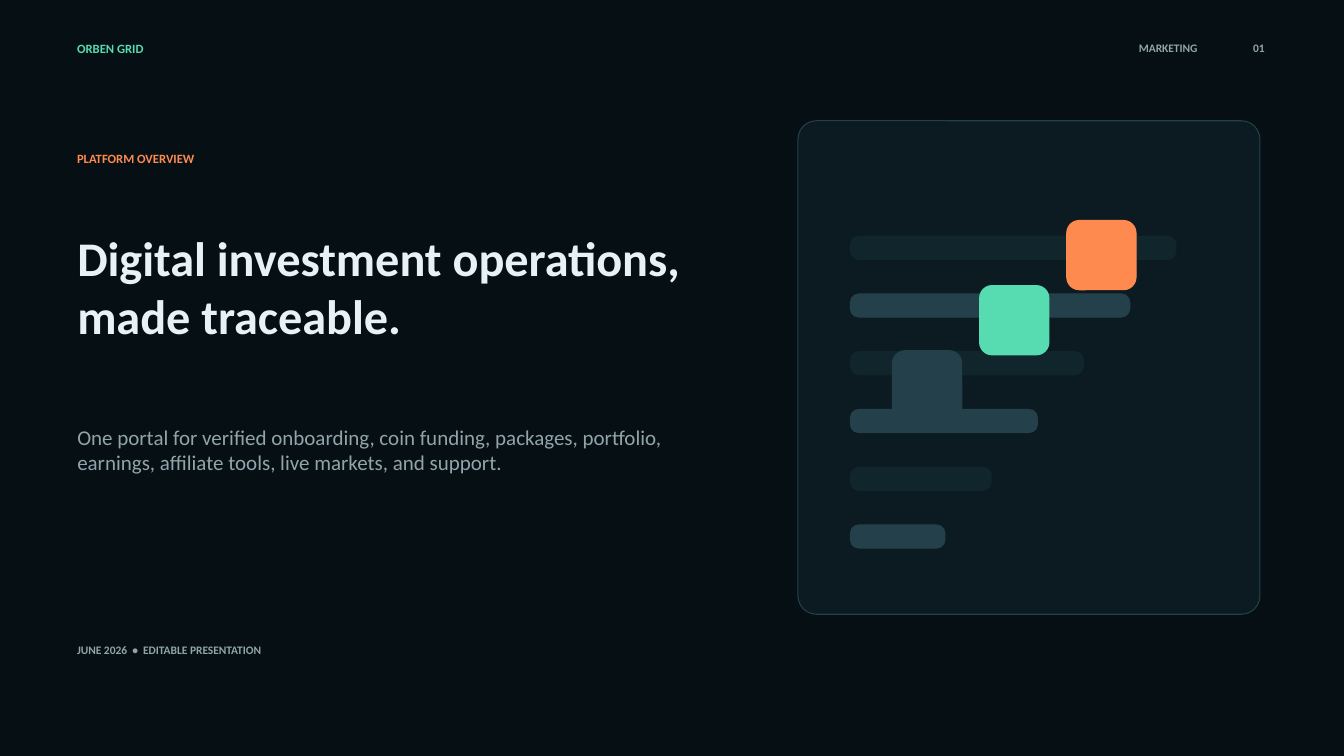
"""Build the cover slide of a platform overview deck."""
from pptx import Presentation
from pptx.dml.color import RGBColor
from pptx.enum.shapes import MSO_SHAPE
from pptx.enum.text import MSO_ANCHOR, MSO_AUTO_SIZE, PP_ALIGN
from pptx.util import Pt

PX = 9525
ROUND = MSO_SHAPE.ROUNDED_RECTANGLE
MIDDLE = MSO_ANCHOR.MIDDLE
FIXED = MSO_AUTO_SIZE.NONE
LEFT, RIGHT = PP_ALIGN.LEFT, PP_ALIGN.RIGHT

NIGHT = RGBColor(0x06, 0x10, 0x14)
PANEL = RGBColor(0x0C, 0x1B, 0x21)
DIM = RGBColor(0x10, 0x25, 0x2C)
SLATE = RGBColor(0x24, 0x40, 0x4A)
MINT = RGBColor(0x56, 0xDC, 0xB0)
ORANGE = RGBColor(0xFF, 0x8A, 0x50)
WHITE = RGBColor(0xE8, 0xF1, 0xF3)
GREY = RGBColor(0x91, 0xA4, 0xAC)

deck = Presentation()
deck.slide_width, deck.slide_height = 1280 * PX, 720 * PX
slide = deck.slides.add_slide(deck.slide_layouts[0])
slide.background.fill.solid()
slide.background.fill.fore_color.rgb = NIGHT


def write(words, box, size, color, bold=True, align=LEFT, holder=None):
    """Put text in a placeholder or a new text box and return its paragraph."""
    left, top, width, height = [n * PX for n in box]
    shape = holder or slide.shapes.add_textbox(left, top, width, height)
    shape.left, shape.top, shape.width, shape.height = left, top, width, height
    frame = shape.text_frame
    frame.word_wrap = True
    frame.auto_size = FIXED
    frame.vertical_anchor = MIDDLE
    para = frame.paragraphs[0]
    para.alignment = align
    para.space_before = Pt(0)
    font = para.font
    font.name, font.size, font.bold = "Calibri", Pt(size), bold
    font.color.rgb = color
    for word in words:
        para.add_run().text = word
    return para


def block(box, bend, fill, line):
    """Draw one rounded rectangle."""
    shape = slide.shapes.add_shape(ROUND, *[n * PX for n in box])
    shape.adjustments[0] = bend
    shape.shadow.inherit = False
    shape.fill.solid()
    shape.fill.fore_color.rgb = fill
    shape.line.color.rgb = line
    shape.line.width = Pt(0.75)


write(["ORBEN GRID"], (64, 34, 230, 24), 9, MINT)
write(["MARKETING"], (880, 34, 270, 24), 8.2, GREY, align=RIGHT)
write(["01"], (1160, 34, 54, 24), 8.2, GREY, align=RIGHT)

block((760, 115, 440, 470), 0.04, PANEL, SLATE)
for i in range(6):
    tone = DIM if i % 2 else SLATE
    block((810, 500 - 55 * i, 90 + 44 * i, 22), 0.36, tone, tone)
for i, tone in enumerate((SLATE, MINT, ORANGE)):
    block((850 + 83 * i, 334 - 62 * i, 66, 66), 0.18, tone, tone)

write(["PLATFORM OVERVIEW"], (64, 138, 580, 26), 9, ORANGE)
write(["Digital investment operations, made traceable."],
      (64, 185, 620, 175), 34.5, WHITE, holder=slide.shapes.title)
write(["One portal for verified onboarding, coin funding, packages, portfolio, "
       "earnings, affiliate tools, live markets, and support."],
      (64, 378, 590, 100), 15, GREY, False, holder=slide.placeholders[1])
date = write(["JUNE 2026", " •", " EDITABLE PRESENTATION"],
             (64, 605, 560, 28), 8.2, GREY)
date.runs[1].font._element.set("spc", "185")

deck.save("out.pptx")
